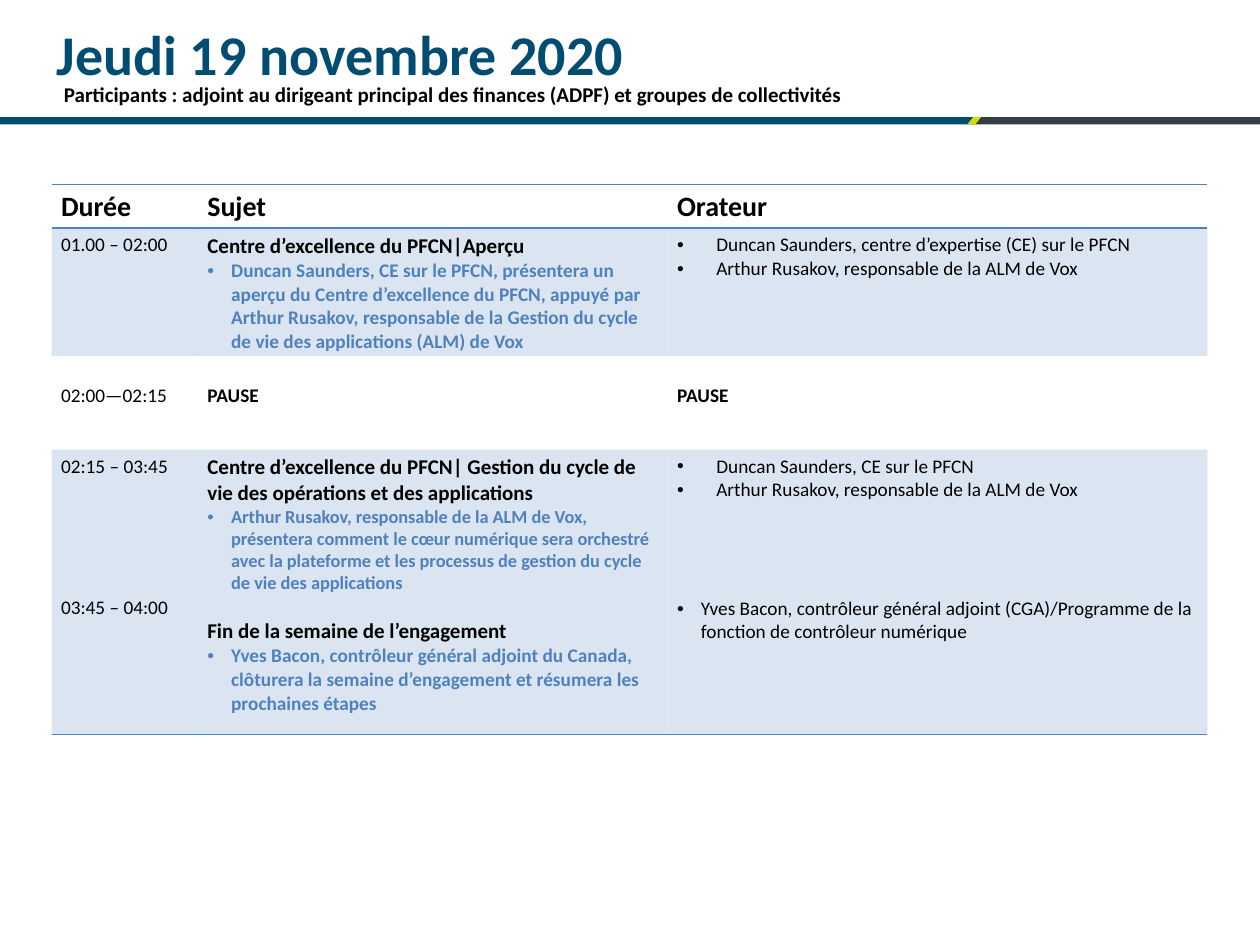
import pptx
import pptx.dml.color
import pptx.enum.shapes
import pptx.enum.text
import pptx.oxml
import pptx.oxml.ns
import pptx.util
from pptx.util import Cm

NAVY = pptx.dml.color.RGBColor(0x00, 0x4D, 0x71)
SLATE = pptx.dml.color.RGBColor(0x33, 0x3E, 0x48)
LIME = pptx.dml.color.RGBColor(0xCF, 0xDE, 0x00)
BLUE = pptx.dml.color.RGBColor(0x4F, 0x81, 0xBD)
BLACK = pptx.dml.color.RGBColor(0x00, 0x00, 0x00)

SHAPES = pptx.enum.shapes.MSO_SHAPE
NAMESPACE = pptx.oxml.ns.nsdecls("a")
PLAIN_TABLE = "{2D5ABB26-0587-4C30-8999-92F81FD0307C}"
NARROW, WIDE = Cm(0.48), Cm(0.79)
BLANK_LINE = 13.5


def line(text, size=11, bold=False, color=BLACK, indent=None, skipped=0):
    return dict(text=text, size=size, bold=bold, color=color, indent=indent, skipped=skipped)


def heading(text, size=12, skipped=0):
    return line(text, size, True, skipped=skipped)


def detail(text, size=11):
    return line(text, size, True, BLUE, NARROW)


def speaker(text, indent=WIDE, skipped=0):
    return line(text, indent=indent, skipped=skipped)


AGENDA = [
    [[heading(text, 16)] for text in ("Durée", "Sujet", "Orateur")],
    [
        [line("01.00 – 02:00")],
        [
            heading("Centre d’excellence du PFCN|Aperçu"),
            detail("Duncan Saunders, CE sur le PFCN, présentera un aperçu du Centre "
                   "d’excellence du PFCN, appuyé par Arthur Rusakov, responsable de la "
                   "Gestion du cycle de vie des applications (ALM) de Vox"),
        ],
        [
            speaker("Duncan Saunders, centre d’expertise (CE) sur le PFCN"),
            speaker("Arthur Rusakov, responsable de la ALM de Vox"),
        ],
    ],
    [[line("02:00—02:15")], [heading("PAUSE", 11)], [heading("PAUSE", 11)]],
    [
        [line("02:15 – 03:45"), line("03:45 – 04:00", skipped=5)],
        [
            heading("Centre d’excellence du PFCN| Gestion du cycle de vie des "
                    "opérations et des applications"),
            detail("Arthur Rusakov, responsable de la ALM de Vox, présentera comment le "
                   "cœur numérique sera orchestré avec la plateforme et les processus de "
                   "gestion du cycle de vie des applications", 10.5),
            heading("Fin de la semaine de l’engagement", skipped=1),
            detail("Yves Bacon, contrôleur général adjoint du Canada, clôturera la "
                   "semaine d’engagement et résumera les prochaines étapes"),
        ],
        [
            speaker("Duncan Saunders, CE sur le PFCN"),
            speaker("Arthur Rusakov, responsable de la ALM de Vox"),
            speaker("Yves Bacon, contrôleur général adjoint (CGA)/Programme de la "
                    "fonction de contrôleur numérique", NARROW, 4),
        ],
    ],
]
COLUMN_WIDTHS = (2.95, 9.47, 10.88)
ROW_HEIGHTS = (0.88, 2.56, 1.89, 5.74)
ROW_BORDERS = (("lnT", "lnB"), (), (), ("lnB",))
SHADED_ROWS = (1, 3)
PAUSE_ROW = 2


class SlideBuilder:
    """Hold the common style and the current slide, and add its elements."""

    def __init__(self, deck, font):
        self.font = font
        self.page = deck.slides.add_slide(deck.slide_layouts[5])

    def fill_text(self, frame, lines):
        frame.word_wrap = True
        for index, item in enumerate(lines):
            para = frame.add_paragraph() if index else frame.paragraphs[0]
            para.text = item["text"]
            para.alignment = pptx.enum.text.PP_ALIGN.LEFT
            if item["skipped"]:
                para.space_before = pptx.util.Pt(item["skipped"] * BLANK_LINE)
            if item["indent"]:
                self.bullet(para, item["indent"])
            for span in para.runs:
                span.font.name = self.font
                span.font.size = pptx.util.Pt(item["size"])
                span.font.bold = item["bold"]
                span.font.color.rgb = item["color"]

    def bullet(self, para, indent):
        properties = para._p.get_or_add_pPr()
        properties.set("marL", str(indent))
        properties.set("indent", str(-indent))
        for tag in ('buFont typeface="Arial"', 'buChar char="•"'):
            properties.append(pptx.oxml.parse_xml(f"<a:{tag} {NAMESPACE}/>"))

    def title(self, text, left, top, width, height):
        box = self.page.shapes.title
        box.left, box.top, box.width, box.height = left, top, width, height
        box.text_frame.vertical_anchor = pptx.enum.text.MSO_ANCHOR.BOTTOM
        self.fill_text(box.text_frame, [line(text, 32, True, NAVY)])

    def text(self, text, left, top, width, height):
        box = self.page.shapes.add_textbox(left, top, width, height)
        self.fill_text(box.text_frame, [heading(text)])

    def bar(self, kind, color, left, top, width, height):
        shape = self.page.shapes.add_shape(kind, left, top, width, height)
        shape.shadow.inherit = False
        shape.fill.solid()
        shape.fill.fore_color.rgb = color
        shape.line.fill.background()
        return shape

    def table(self, left, top):
        frame = self.page.shapes.add_table(
            len(ROW_HEIGHTS), len(COLUMN_WIDTHS), left, top,
            Cm(sum(COLUMN_WIDTHS)), Cm(sum(ROW_HEIGHTS)))
        table = frame.table
        table.horz_banding = False
        table._tbl.tblPr.find(pptx.oxml.ns.qn("a:tableStyleId")).text = PLAIN_TABLE
        for column, width in zip(table.columns, COLUMN_WIDTHS):
            column.width = Cm(width)
        for index, (row, height) in enumerate(zip(table.rows, ROW_HEIGHTS)):
            row.height = Cm(height)
            for cell, lines in zip(row.cells, AGENDA[index]):
                cell.margin_left = cell.margin_right = Cm(0.19)
                cell.margin_top = cell.margin_bottom = Cm(0.1)
                if index == PAUSE_ROW:
                    cell.margin_top += pptx.util.Pt(BLANK_LINE)
                self.borders(cell, ROW_BORDERS[index])
                self.shade(cell, index in SHADED_ROWS)
                self.fill_text(cell.text_frame, lines)

    def borders(self, cell, sides):
        for side in sides:
            cell._tc.get_or_add_tcPr().append(pptx.oxml.parse_xml(
                f'<a:{side} w="12700" {NAMESPACE}><a:solidFill>'
                f'<a:srgbClr val="{BLUE}"/></a:solidFill></a:{side}>'))

    def shade(self, cell, shaded):
        if not shaded:
            cell.fill.background()
            return
        cell.fill.solid()
        cell.fill.fore_color.rgb = BLUE
        color = cell._tc.tcPr.find(pptx.oxml.ns.qn("a:solidFill"))[0]
        color.append(pptx.oxml.parse_xml(f'<a:alpha val="20000" {NAMESPACE}/>'))


def main():
    deck = pptx.Presentation()
    deck.slide_width, deck.slide_height = Cm(25.4), Cm(19.05)
    builder = SlideBuilder(deck, "Calibri")
    top, height, split = Cm(2.36), Cm(0.15), Cm(19.6)
    builder.bar(SHAPES.RECTANGLE, NAVY, 0, top, split, height)
    builder.bar(SHAPES.RECTANGLE, SLATE, split, top, deck.slide_width - split, height)
    accent = builder.bar(SHAPES.PARALLELOGRAM, LIME, Cm(19.5), top, Cm(0.28), height)
    accent.adjustments[0] = 0.8
    builder.text("Participants : adjoint au dirigeant principal des finances (ADPF) "
                 "et groupes de collectivités", Cm(1.04), Cm(1.52), Cm(18.06), Cm(0.76))
    builder.table(Cm(1.04), Cm(3.72))
    builder.title("Jeudi 19 novembre 2020", Cm(0.89), Cm(0.33), Cm(22.86), Cm(1.55))
    deck.save("out.pptx")


if __name__ == "__main__":
    main()
